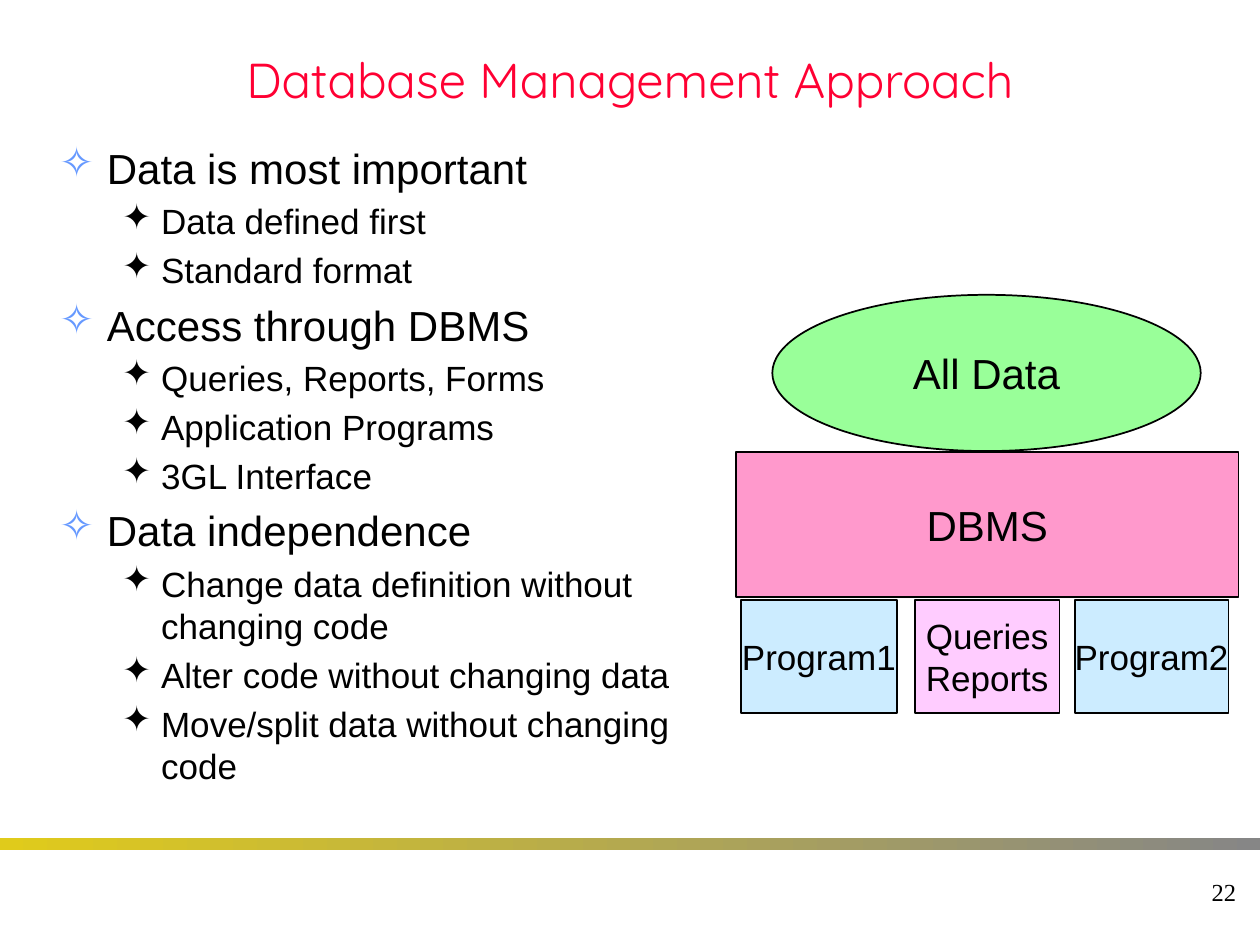
from lxml.etree import SubElement
from pptx import Presentation
from pptx.dml.color import RGBColor
from pptx.enum.shapes import MSO_SHAPE
from pptx.enum.text import MSO_ANCHOR, PP_ALIGN
from pptx.oxml.ns import qn
from pptx.util import Inches, Pt

OUTLINE = [
    ("Data is most important", ["Data defined first", "Standard format"]),
    ("Access through DBMS",
     ["Queries, Reports, Forms", "Application Programs", "3GL Interface"]),
    ("Data independence",
     ["Change data definition without changing code",
      "Alter code without changing data",
      "Move/split data without changing code"]),
]


def color(value):
    return RGBColor.from_string(value)


def write(paragraph, text, size=24, font="Arial", ink="000000",
          align=PP_ALIGN.LEFT, before=0):
    paragraph.alignment = align
    paragraph.space_before = Pt(before)
    run = paragraph.add_run()
    run.text = text
    run.font.size = Pt(size)
    run.font.name = font
    run.font.color.rgb = color(ink)


def add_bullet(paragraph, mark, left, hanging, ink):
    properties = paragraph._p.get_or_add_pPr()
    properties.set("marL", str(Inches(left)))
    properties.set("indent", str(-Inches(hanging)))
    bullet_color = SubElement(properties, qn("a:buClr"))
    SubElement(bullet_color, qn("a:srgbClr"), val=ink)
    SubElement(properties, qn("a:buChar"), char=mark)


def add_text_frame(slide, box, anchor=MSO_ANCHOR.MIDDLE, wrap=True):
    frame = slide.shapes.add_textbox(*map(Inches, box)).text_frame
    frame.word_wrap = wrap
    frame.vertical_anchor = anchor
    return frame


def add_title(slide, box):
    title = add_text_frame(slide, box).paragraphs[0]
    write(title, "Database Management Approach", size=28, font="Quicksand",
          ink="FF0033", align=PP_ALIGN.CENTER)


def add_outline(slide, box):
    frame = add_text_frame(slide, box, anchor=MSO_ANCHOR.TOP)
    paragraph = frame.paragraphs[0]
    for topic, details in OUTLINE:
        if paragraph is None:
            paragraph = frame.add_paragraph()
        write(paragraph, topic, size=24, before=4.8)
        add_bullet(paragraph, "✧", 0.38, 0.38, "6699FF")
        for detail in details:
            paragraph = frame.add_paragraph()
            paragraph.level = 1
            write(paragraph, detail, size=20, before=4)
            add_bullet(paragraph, "✦", 0.81, 0.31, "000000")
        paragraph = None


def add_block(slide, box, lines, fill, size=24, kind=MSO_SHAPE.RECTANGLE):
    block = slide.shapes.add_shape(kind, *map(Inches, box))
    block.shadow.inherit = False
    block.fill.solid()
    block.fill.fore_color.rgb = color(fill)
    block.line.color.rgb = color("000000")
    block.line.width = Pt(1)
    frame = block.text_frame
    frame.word_wrap = False
    frame.vertical_anchor = MSO_ANCHOR.MIDDLE
    for index, line in enumerate(lines):
        paragraph = frame.add_paragraph() if index else frame.paragraphs[0]
        write(paragraph, line, size=size, align=PP_ALIGN.CENTER)


def add_architecture(slide, box):
    left, top, width, height = box
    add_block(slide, (left + 0.29, top, 3.4, 1.24), ["All Data"], "99FF99",
              kind=MSO_SHAPE.OVAL)
    add_block(slide, (left, top + 1.25, width, 1.15), ["DBMS"], "FF99CC")
    clients = [
        (0.04, 1.24, ["Program1"], "CCECFF"),
        (2.69, 1.22, ["Program2"], "CCECFF"),
        (1.42, 1.15, ["Queries", "Reports"], "FFCCFF"),
    ]
    for offset, client_width, lines, fill in clients:
        client_box = (left + offset, top + height - 0.9, client_width, 0.9)
        add_block(slide, client_box, lines, fill, size=20)


def add_footer(slide, box):
    left, top, width, height = box
    band = slide.shapes.add_shape(
        MSO_SHAPE.RECTANGLE, *map(Inches, (left, top, width, 0.1)))
    band.shadow.inherit = False
    band.line.fill.background()
    band.fill.gradient()
    band.fill.gradient_angle = 0
    for stop, ink in zip(band.fill.gradient_stops, ("E0CB1B", "868686")):
        stop.color.rgb = color(ink)
    number_box = (left + width - 2.17, top + height - 0.5, 2.08, 0.5)
    number = add_text_frame(slide, number_box, wrap=False).paragraphs[0]
    write(number, "22", size=14, font="Times New Roman", align=PP_ALIGN.RIGHT)


def main():
    presentation = Presentation()
    presentation.slide_width = Inches(10)
    presentation.slide_height = Inches(7.5)
    slide = presentation.slides.add_slide(presentation.slide_layouts[6])
    add_footer(slide, (0, 6.65, 10, 0.68))
    add_title(slide, (0, 0, 10, 1.25))
    add_outline(slide, (0.37, 1.08, 5.22, 5.58))
    add_architecture(slide, (5.84, 2.34, 3.99, 3.32))
    presentation.save("out.pptx")


if __name__ == "__main__":
    main()
